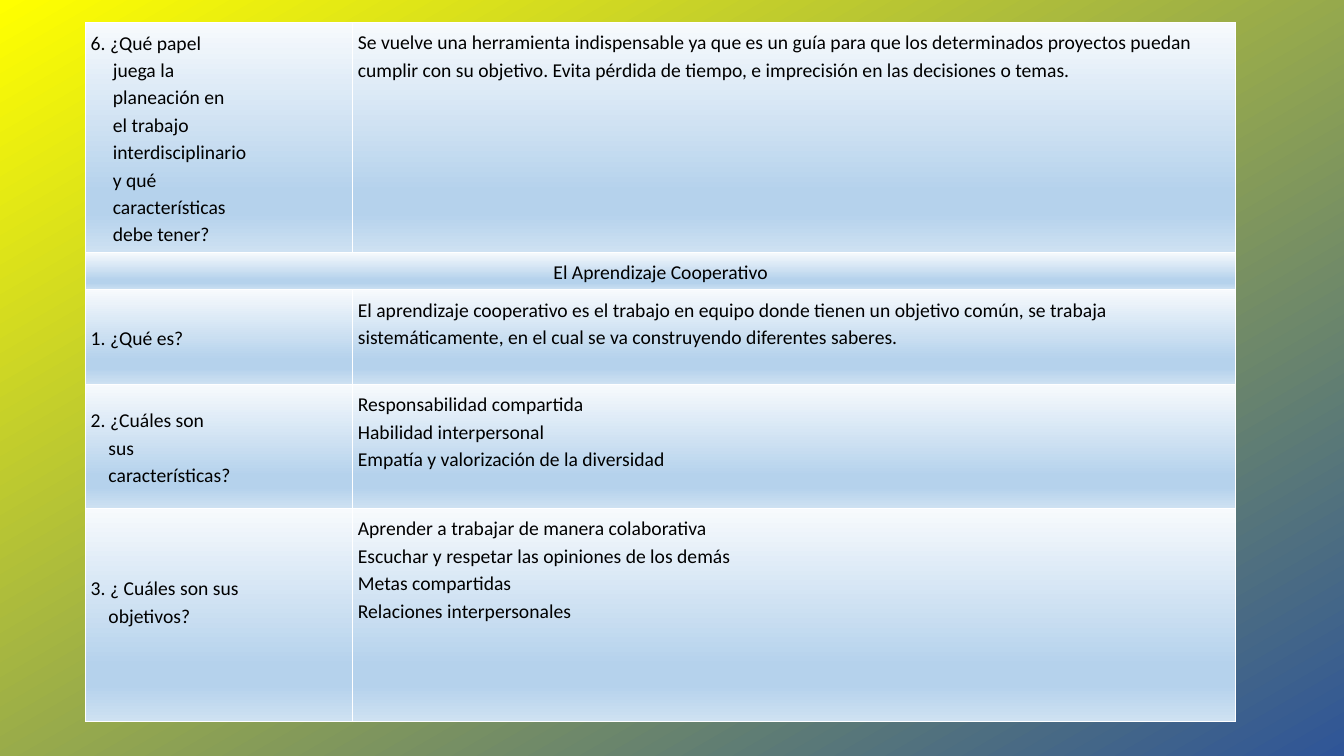
"""Build a slide with a question table on cooperative learning."""
from dataclasses import dataclass

from lxml.etree import SubElement
from pptx import Presentation
from pptx.dml.color import RGBColor
from pptx.enum.text import MSO_ANCHOR as Anchor, PP_ALIGN as Align
from pptx.oxml.ns import qn
from pptx.util import Pt


@dataclass(frozen=True)
class Theme:
    font: str = "Calibri"
    size: float = 14
    line_spacing: float = 1.15
    text: str = "000000"
    border: str = "FFFFFF"
    border_width: float = 1
    inset: float = 3.6
    background: tuple = ((0, "2F5597"), (100, "FFFF00"))
    cell: tuple = ((0, "F7FAFD"), (74, "B5D2EC"), (83, "B5D2EC"), (100, "CEE1F2"))


@dataclass(frozen=True)
class Question:
    lines: tuple
    answers: tuple
    height: float
    indent: float = 12.7
    bottom: float = 3.6


class SlideBuilder:
    def __init__(self, presentation, theme):
        self.theme = theme
        self.slide = presentation.slides.add_slide(presentation.slide_layouts[6])

    def gradient(self, fill, owner, stops, angle):
        fill.gradient()
        fill.gradient_angle = angle
        stop_list = owner.find(".//" + qn("a:gsLst"))
        for stop in list(stop_list):
            stop_list.remove(stop)
        for position, color in stops:
            stop = SubElement(stop_list, qn("a:gs"), pos=str(position * 1000))
            SubElement(stop, qn("a:srgbClr"), val=color)

    def background(self):
        self.gradient(self.slide.background.fill, self.slide.element, self.theme.background, 120)

    def borders(self, cell):
        properties = cell._tc.get_or_add_tcPr()
        for index, side in enumerate(("lnL", "lnR", "lnT", "lnB")):
            line = SubElement(properties, qn("a:" + side), w=str(Pt(self.theme.border_width)))
            SubElement(SubElement(line, qn("a:solidFill")), qn("a:srgbClr"), val=self.theme.border)
            properties.insert(index, line)

    def cell(self, cell, lines, anchor=Anchor.TOP, align=Align.LEFT, indent=0, bottom=None):
        theme = self.theme
        self.gradient(cell.fill, cell._tc, theme.cell, 270)
        self.borders(cell)
        cell.vertical_anchor = anchor
        cell.margin_left = cell.margin_right = cell.margin_top = Pt(theme.inset)
        cell.margin_bottom = Pt(bottom or theme.inset)
        cell.text_frame.text = "\n".join(lines)
        for index, paragraph in enumerate(cell.text_frame.paragraphs):
            paragraph.alignment = align
            paragraph.line_spacing = theme.line_spacing
            if index and indent:
                paragraph._p.get_or_add_pPr().set("marL", str(Pt(indent)))
            for run in paragraph.runs:
                run.font.name = theme.font
                run.font.size = Pt(theme.size)
                run.font.bold = False
                run.font.color.rgb = RGBColor.from_string(theme.text)

    def table(self, left, top, widths, rows):
        height = sum(row.height for row in rows)
        frame = self.slide.shapes.add_table(
            len(rows), len(widths), Pt(left), Pt(top), Pt(sum(widths)), Pt(height))
        table = frame.table
        table.first_row = table.horz_banding = False
        for column, width in zip(table.columns, widths):
            column.width = Pt(width)
        for index, row in enumerate(rows):
            table.rows[index].height = Pt(row.height)
            question, answer = table.cell(index, 0), table.cell(index, 1)
            if row.answers:
                self.cell(question, row.lines, Anchor.MIDDLE, indent=row.indent, bottom=row.bottom)
            else:
                question.merge(answer)
                self.cell(question, row.lines, align=Align.CENTER)
            self.cell(answer, row.answers)


ROWS = (
    Question(
        ("6. ¿Qué papel", "juega la", "planeación en", "el trabajo", "interdisciplinario",
         "y qué", "características", "debe tener?"),
        ("Se vuelve una herramienta indispensable ya que es un guía para que los determinados "
         "proyectos puedan cumplir con su objetivo. Evita pérdida de tiempo, e imprecisión en "
         "las decisiones o temas.",),
        160.6, indent=15.8),
    Question(("El Aprendizaje Cooperativo",), (), 25.9),
    Question(
        ("1. ¿Qué es?",),
        ("El aprendizaje cooperativo es el trabajo en equipo donde tienen un objetivo común, "
         "se trabaja sistemáticamente, en el cual se va construyendo diferentes saberes.",),
        67.7),
    Question(
        ("2. ¿Cuáles son", "sus", "características?"),
        ("Responsabilidad compartida", "Habilidad interpersonal",
         "Empatía y valorización de la diversidad"),
        88.6),
    Question(
        ("3. ¿ Cuáles son sus", "objetivos?"),
        ("Aprender a trabajar de manera colaborativa",
         "Escuchar y respetar las opiniones de los demás",
         "Metas compartidas", "Relaciones interpersonales"),
        151.9, bottom=23.3),
)


def main():
    presentation = Presentation()
    presentation.slide_width, presentation.slide_height = Pt(960), Pt(540)
    builder = SlideBuilder(presentation, Theme())
    builder.background()
    builder.table(61.2, 16.2, (190.8, 630.7), ROWS)
    presentation.save("out.pptx")


if __name__ == "__main__":
    main()
